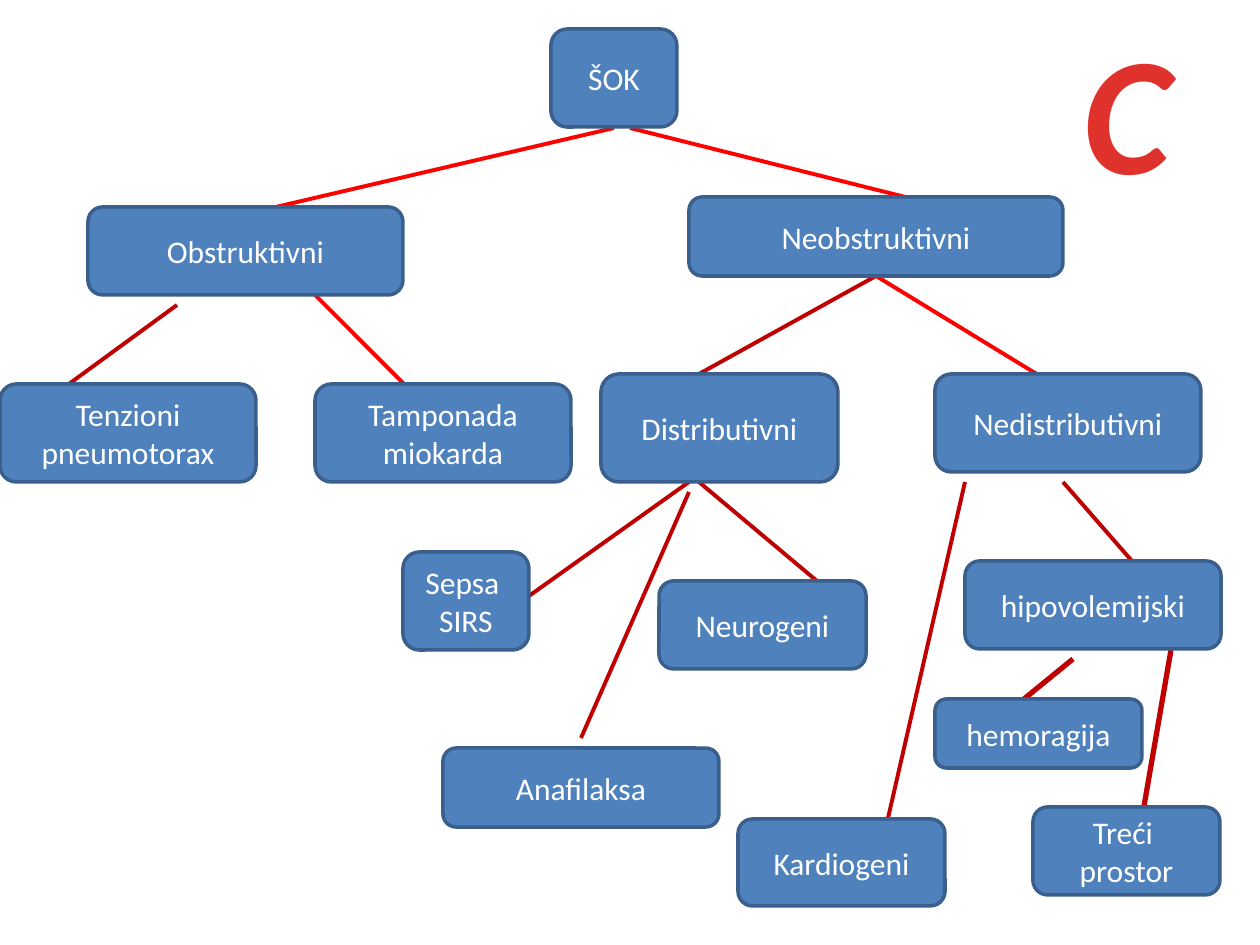
from dataclasses import dataclass

from lxml.etree import SubElement
from pptx import Presentation
from pptx.dml.color import RGBColor
from pptx.enum.shapes import MSO_CONNECTOR, MSO_SHAPE
from pptx.enum.text import MSO_ANCHOR, PP_ALIGN
from pptx.oxml.ns import qn
from pptx.util import Pt

PX = 914400 / 126


@dataclass(frozen=True)
class Theme:
    font: str = "Calibri"
    box: str = "4F81BD"
    border: str = "3A5F8C"
    text: str = "FFFFFF"
    letter: str = "E0322D"
    red: str = "FF0000"
    dark_red: str = "C00000"
    text_size: int = 18
    letter_size: int = 96
    border_width: float = 2
    line: float = 2.25
    thick: float = 3


T = Theme()

LETTER = ("C", (1033, 0, 189, 217))

# paragraphs, (left, top, width, height)
BOXES = [
    (["ŠOK"], (551, 29, 126, 98)),
    (["Obstruktivni"], (88, 207, 315, 88)),
    (["Neobstruktivni"], (689, 197, 374, 79)),
    (["Tenzioni pneumotorax"], (0, 384, 256, 98)),
    (["Tamponada", "miokarda"], (315, 384, 256, 98)),
    (["Distributivni"], (601, 374, 237, 108)),
    (["Nedistributivni"], (935, 374, 266, 98)),
    (["Sepsa ", "SIRS"], (403, 552, 126, 98)),
    (["Anafilaksa"], (443, 748, 276, 79)),
    (["Neurogeni"], (659, 581, 207, 88)),
    (["Kardiogeni"], (738, 819, 207, 87)),
    (["hipovolemijski"], (965, 561, 256, 88)),
    (["hemoragija"], (935, 699, 207, 69)),
    (["Treći ", "prostor"], (1033, 807, 187, 88)),
]

# start, end, colour, width
BRANCHES = [
    ((614, 128), (276, 207), T.red, T.line),
    ((630, 128), (945, 207), T.red, T.line),
    ((177, 305), (69, 384), T.dark_red, T.line),
    ((315, 295), (413, 393), T.red, T.line),
    ((876, 276), (699, 374), T.dark_red, T.line),
    ((876, 276), (1053, 384), T.red, T.line),
    ((689, 482), (522, 601), T.dark_red, T.line),
    ((689, 492), (581, 738), T.dark_red, T.line),
    ((699, 482), (817, 581), T.dark_red, T.line),
    ((965, 482), (886, 827), T.dark_red, T.line),
    ((1063, 482), (1132, 561), T.dark_red, T.line),
    ((1073, 659), (1024, 699), T.dark_red, T.thick),
    ((1171, 650), (1132, 876), T.dark_red, T.thick),
]


def px(*values):
    return [round(v * PX) for v in values]


def rgb(color):
    return RGBColor.from_string(color)


def write(tf, lines, size, color, bold=False, italic=False):
    tf.word_wrap = True
    for i, line in enumerate(lines):
        p = tf.paragraphs[0] if i == 0 else tf.add_paragraph()
        p.alignment = PP_ALIGN.CENTER
        r = p.add_run()
        r.text = line
        r.font.name, r.font.size = T.font, Pt(size)
        r.font.bold, r.font.italic = bold, italic
        r.font.color.rgb = rgb(color)


def add_branch(s, start, end, color, width):
    c = s.shapes.add_connector(MSO_CONNECTOR.STRAIGHT, *px(*start, *end))
    c.line.color.rgb = rgb(color)
    c.line.width = Pt(width)
    SubElement(c._element.spPr, qn("a:effectLst"))


def add_box(s, lines, area):
    sp = s.shapes.add_shape(MSO_SHAPE.ROUNDED_RECTANGLE, *px(*area))
    sp.shadow.inherit = False
    sp.fill.solid()
    sp.fill.fore_color.rgb = rgb(T.box)
    sp.line.color.rgb = rgb(T.border)
    sp.line.width = Pt(T.border_width)
    sp.text_frame.vertical_anchor = MSO_ANCHOR.MIDDLE
    write(sp.text_frame, lines, T.text_size, T.text)


def main():
    prs = Presentation()
    prs.slide_width, prs.slide_height = px(1260, 945)
    s = prs.slides.add_slide(prs.slide_layouts[6])

    letter, area = LETTER
    tb = s.shapes.add_textbox(*px(*area))
    write(tb.text_frame, [letter], T.letter_size, T.letter, bold=True, italic=True)

    # Branches go first so that the boxes cover their ends.
    for branch in BRANCHES:
        add_branch(s, *branch)
    for lines, area in BOXES:
        add_box(s, lines, area)

    prs.save("out.pptx")


if __name__ == "__main__":
    main()
